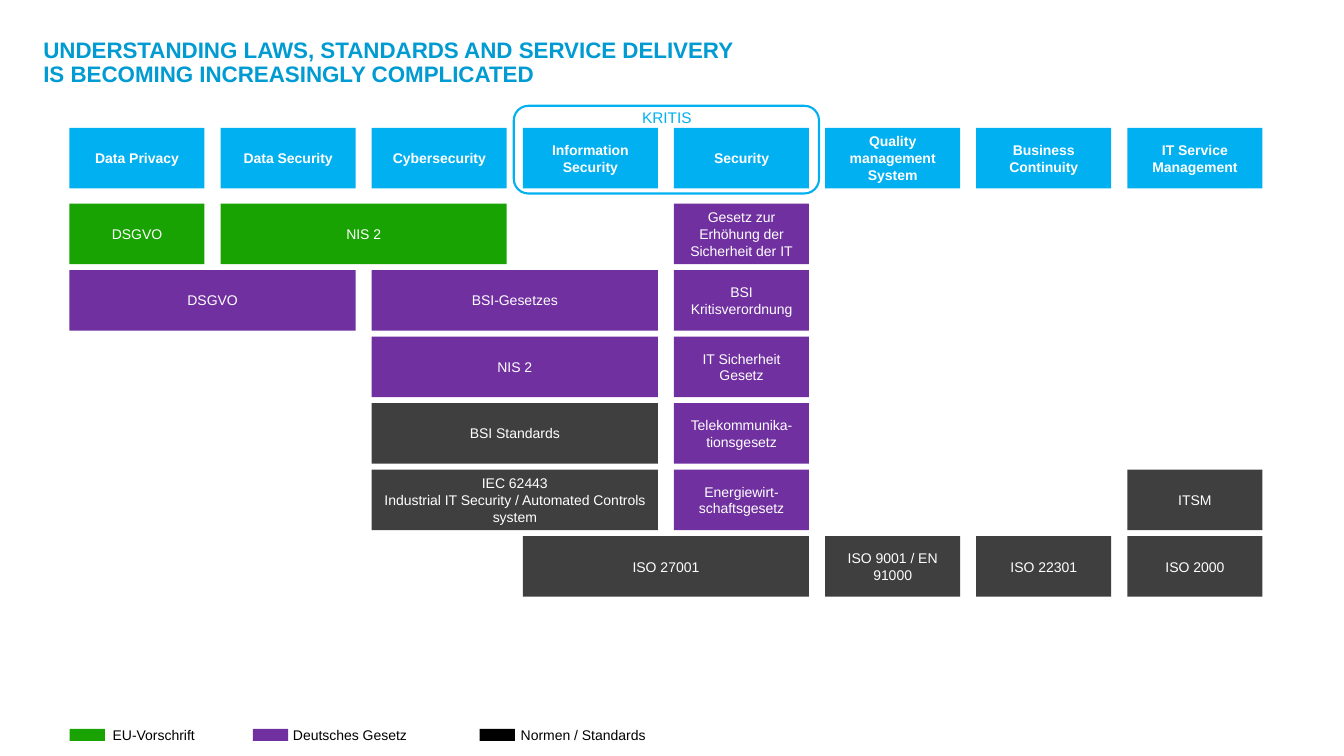
from pptx import Presentation
from pptx.dml.color import RGBColor
from pptx.enum import shapes, text
from pptx.util import Inches, Pt

BLUE = RGBColor(0x00, 0xB0, 0xF0)
TITLE_BLUE = RGBColor(0x00, 0x9B, 0xD2)
GREEN = RGBColor(0x18, 0xA3, 0x03)
PURPLE = RGBColor(0x70, 0x30, 0xA0)
GREY = RGBColor(0x3F, 0x3F, 0x3F)
BLACK = RGBColor(0x00, 0x00, 0x00)
WHITE = RGBColor(0xFF, 0xFF, 0xFF)

GRID_LEFT, COLUMN_STEP, BOX_WIDTH = 0.69, 1.5, 1.34
HEADER_TOP, GRID_TOP, ROW_STEP, BOX_HEIGHT = 1.27, 2.02, 0.66, 0.6

presentation = Presentation()
presentation.slide_width = Inches(13.34)
presentation.slide_height = Inches(7.5)
slide = presentation.slides.add_slide(presentation.slide_layouts[5])


def add_box(left, top, width, height, fill):
    box = slide.shapes.add_shape(
        shapes.MSO_SHAPE.RECTANGLE, Inches(left), Inches(top), Inches(width), Inches(height))
    box.shadow.inherit = False
    box.fill.solid()
    box.fill.fore_color.rgb = fill
    box.line.fill.background()
    return box


def write(shape, wording, size, color, bold=False, align=text.PP_ALIGN.CENTER):
    """Fill a shape with paragraphs, one for each line of the wording."""
    frame = shape.text_frame
    frame.word_wrap = True
    frame.text = wording
    for paragraph in frame.paragraphs:
        paragraph.alignment = align
        paragraph.font.name = "Arial"
        paragraph.font.size = Pt(size)
        paragraph.font.bold = bold
        paragraph.font.color.rgb = color


# Title
title = slide.shapes.title
title.left, title.top = Inches(0.43), Inches(0.39)
title.width, title.height = Inches(8.38), Inches(0.67)
write(title,
      "UNDERSTANDING LAWS, STANDARDS AND SERVICE DELIVERY\nIS BECOMING INCREASINGLY COMPLICATED",
      16, TITLE_BLUE, bold=True, align=text.PP_ALIGN.LEFT)
title_frame = title.text_frame
title_frame.auto_size = text.MSO_AUTO_SIZE.NONE
title_frame.vertical_anchor = text.MSO_ANCHOR.TOP
title_frame.margin_left = title_frame.margin_right = 0
title_frame.margin_top = title_frame.margin_bottom = 0
for paragraph in title_frame.paragraphs:
    paragraph.line_spacing = 0.9

# Column headers
headers = ["Data Privacy", "Data Security", "Cybersecurity", "Information Security",
           "Security", "Quality management System", "Business Continuity",
           "IT Service Management"]
for column, header in enumerate(headers):
    box = add_box(GRID_LEFT + column * COLUMN_STEP, HEADER_TOP, BOX_WIDTH, BOX_HEIGHT, BLUE)
    write(box, header, 10, WHITE, bold=True)

# Regulations: row, first column, columns covered, colour, wording
regulations = [
    (0, 0, 1, GREEN, "DSGVO"),
    (0, 1, 2, GREEN, "NIS 2"),
    (0, 4, 1, PURPLE, "Gesetz zur Erhöhung der Sicherheit der IT"),
    (1, 0, 2, PURPLE, "DSGVO"),
    (1, 2, 2, PURPLE, "BSI-Gesetzes"),
    (1, 4, 1, PURPLE, "BSI Kritisverordnung"),
    (2, 2, 2, PURPLE, "NIS 2"),
    (2, 4, 1, PURPLE, "IT Sicherheit Gesetz"),
    (3, 2, 2, GREY, "BSI Standards"),
    (3, 4, 1, PURPLE, "Telekommunika-tionsgesetz"),
    (4, 2, 2, GREY, "IEC 62443\nIndustrial IT Security / Automated Controls system"),
    (4, 4, 1, PURPLE, "Energiewirt-schaftsgesetz"),
    (4, 7, 1, GREY, "ITSM"),
    (5, 3, 2, GREY, "ISO 27001"),
    (5, 5, 1, GREY, "ISO 9001 / EN 91000"),
    (5, 6, 1, GREY, "ISO 22301"),
    (5, 7, 1, GREY, "ISO 2000"),
]
for row, column, span, color, wording in regulations:
    box = add_box(GRID_LEFT + column * COLUMN_STEP, GRID_TOP + row * ROW_STEP,
                  BOX_WIDTH + (span - 1) * COLUMN_STEP, BOX_HEIGHT, color)
    write(box, wording, 10, WHITE)

# KRITIS frame around two headers
kritis_frame = slide.shapes.add_shape(
    shapes.MSO_SHAPE.ROUNDED_RECTANGLE, Inches(5.1), Inches(1.05), Inches(3.03), Inches(0.87))
kritis_frame.shadow.inherit = False
kritis_frame.fill.background()
kritis_frame.line.color.rgb = BLUE
kritis_frame.line.width = Pt(1.5)
kritis_label = slide.shapes.add_textbox(Inches(5.95), Inches(1.02), Inches(1.34), Inches(0.28))
write(kritis_label, "KRITIS", 11, BLUE)

# Legend: swatch left, label left, label width, colour, wording
legend = [
    (0.69, 1.02, 1.11, GREEN, "EU-Vorschrift"),
    (2.51, 2.81, 1.56, PURPLE, "Deutsches Gesetz"),
    (4.76, 5.07, 1.45, BLACK, "Normen / Standards"),
]
for swatch_left, label_left, label_width, color, wording in legend:
    add_box(swatch_left, 7.23, 0.35, 0.12, color)
    label = slide.shapes.add_textbox(
        Inches(label_left), Inches(7.16), Inches(label_width), Inches(0.27))
    write(label, wording, 10, BLACK, align=text.PP_ALIGN.LEFT)

presentation.save("out.pptx")
